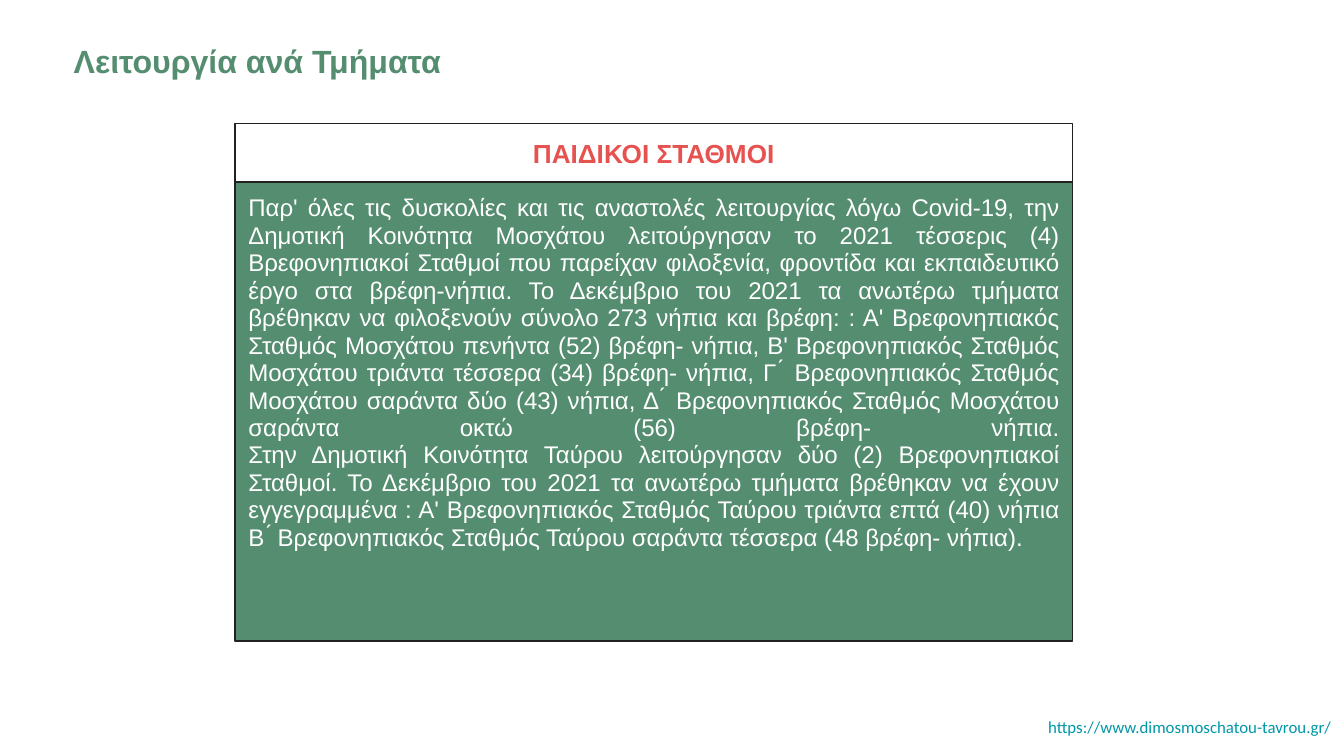
import pptx
import pptx.dml.color
import pptx.enum.shapes
import pptx.enum.text
import pptx.util

Inches = pptx.util.Inches
Pt = pptx.util.Pt
ALIGN = pptx.enum.text.PP_ALIGN
RECTANGLE = pptx.enum.shapes.MSO_SHAPE.RECTANGLE
COLORS = {"green": "548D6F", "red": "E6524F", "teal": "0097A7",
          "white": "FFFFFF", "outline": "212121"}


def rgb(name):
    return pptx.dml.color.RGBColor.from_string(COLORS[name])


def write(shape, text, size, color, align, bold=False, font="Arial"):
    frame = shape.text_frame
    frame.word_wrap = True
    frame.vertical_anchor = pptx.enum.text.MSO_ANCHOR.TOP
    frame.margin_left = frame.margin_right = Inches(0.1)
    frame.margin_top = frame.margin_bottom = Inches(0.1)
    paragraph = frame.paragraphs[0]
    paragraph.text = text
    paragraph.alignment = align
    for run in paragraph.runs:
        run.font.name = font
        run.font.size = Pt(size)
        run.font.bold = bold
        run.font.color.rgb = rgb(color)


# Widescreen 16:9 slide
deck = pptx.Presentation()
deck.slide_width = Inches(10)
deck.slide_height = Inches(10 * 9 / 16)
slide = deck.slides.add_slide(deck.slide_layouts[6])
shapes = slide.shapes

# Title
title = shapes.add_textbox(Inches(0.45), Inches(0.21), Inches(9.21), Inches(0.44))
write(title, "Λειτουργία ανά Τμήματα", 17.2, "green", ALIGN.LEFT, bold=True)

# Nursery panel: description below, heading above
description = shapes.add_shape(RECTANGLE, Inches(1.75), Inches(1.35), Inches(6.23), Inches(3.42))
heading = shapes.add_shape(RECTANGLE, Inches(1.75), Inches(0.92), Inches(6.23), Inches(0.44))
for box in (description, heading):
    box.shadow.inherit = False
    box.line.color.rgb = rgb("outline")
    box.line.width = Pt(0.75)
description.fill.solid()
description.fill.fore_color.rgb = rgb("green")
heading.fill.background()

moschato = (
    "Παρ' όλες τις δυσκολίες και τις αναστολές λειτουργίας λόγω Covid-19, την "
    "Δημοτική Κοινότητα Μοσχάτου λειτούργησαν το 2021 τέσσερις (4) "
    "Βρεφονηπιακοί Σταθμοί που παρείχαν φιλοξενία, φροντίδα και εκπαιδευτικό "
    "έργο στα βρέφη-νήπια. Το Δεκέμβριο του 2021 τα ανωτέρω τμήματα "
    "βρέθηκαν να φιλοξενούν σύνολο 273 νήπια και βρέφη: : Α' Βρεφονηπιακός "
    "Σταθμός Μοσχάτου πενήντα (52) βρέφη- νήπια, Β' Βρεφονηπιακός Σταθμός "
    "Μοσχάτου τριάντα τέσσερα (34) βρέφη- νήπια, Γ ́ Βρεφονηπιακός Σταθμός "
    "Μοσχάτου σαράντα δύο (43) νήπια, Δ ́ Βρεφονηπιακός Σταθμός Μοσχάτου "
    "σαράντα οκτώ (56) βρέφη- νήπια."
)
tavros = (
    "Στην Δημοτική Κοινότητα Ταύρου λειτούργησαν δύο (2) Βρεφονηπιακοί "
    "Σταθμοί. Το Δεκέμβριο του 2021 τα ανωτέρω τμήματα βρέθηκαν να έχουν "
    "εγγεγραμμένα : Α' Βρεφονηπιακός Σταθμός Ταύρου τριάντα επτά (40) νήπια "
    "Β ́ Βρεφονηπιακός Σταθμός Ταύρου σαράντα τέσσερα (48 βρέφη- νήπια)."
)
write(description, moschato + "\n" + tavros, 12.9, "white", ALIGN.JUSTIFY)
description.text_frame.paragraphs[0].line_spacing = 0.95
description.text_frame.paragraphs[0].space_after = Pt(12)
write(heading, "ΠΑΙΔΙΚΟΙ ΣΤΑΘΜΟΙ", 14, "red", ALIGN.CENTER, bold=True)

# Web address
address = shapes.add_textbox(Inches(7.18), Inches(5.26), Inches(2.82), Inches(0.35))
write(address, "https://www.dimosmoschatou-tavrou.gr/", 9, "teal", ALIGN.RIGHT, font="Calibri")

deck.save("out.pptx")
